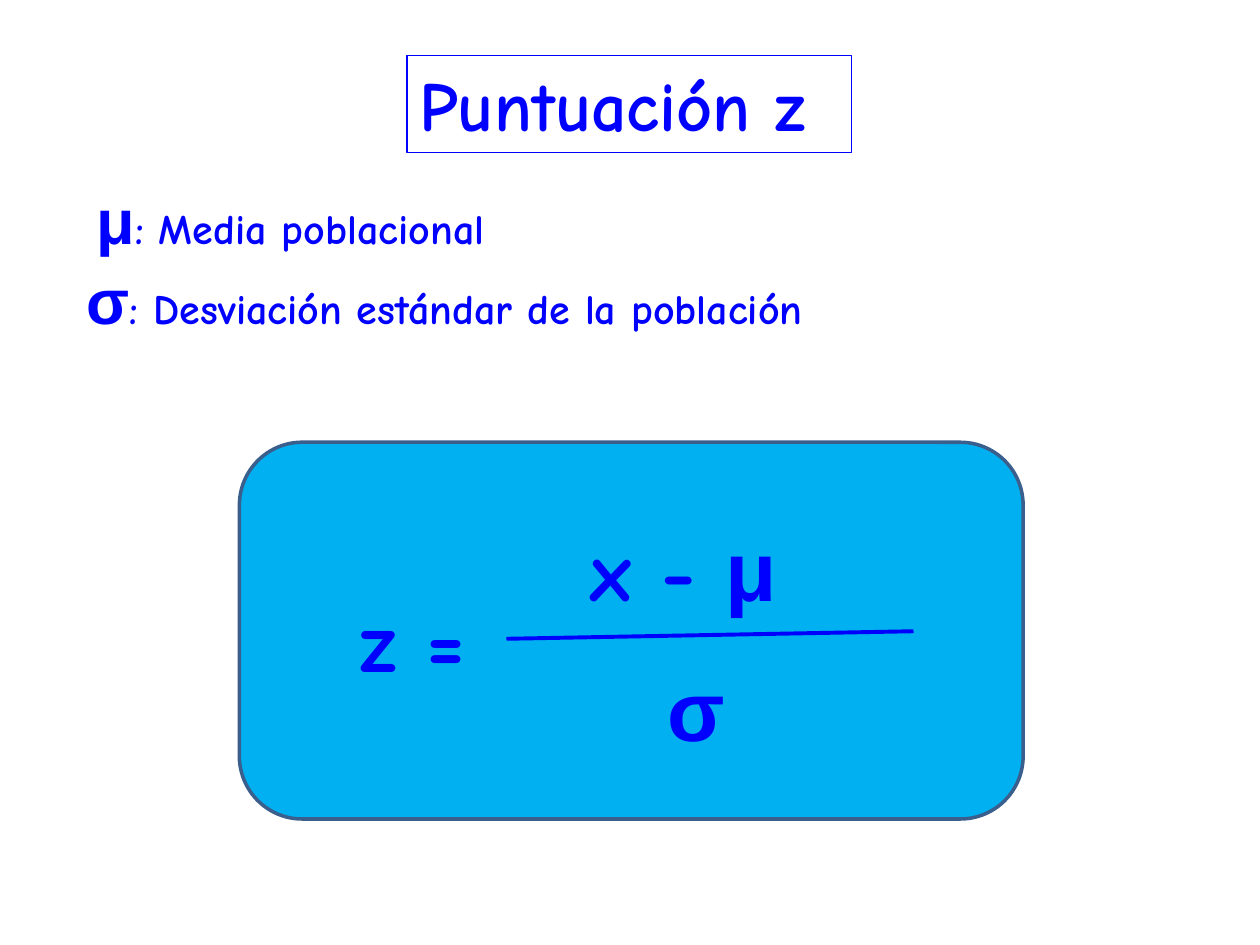
import dataclasses
import typing

import pptx
import pptx.dml.color
import pptx.enum.shapes
import pptx.enum.text
import pptx.oxml
import pptx.util

# Grid: square cells, 100 columns by 75 rows
COLUMNS, ROWS = 100, 75
CELL = pptx.util.Inches(0.1)


@dataclasses.dataclass(frozen=True)
class Theme:
    ink: str = "0000FF"
    card: str = "00B0F0"
    card_edge: str = "3A5F8C"
    text_font: str = "Comic Neue"
    symbol_font: str = "Arial"
    title: int = 40
    symbol: int = 36
    body: int = 24
    formula: int = 48


THEME = Theme()


class Area(typing.NamedTuple):
    column: float
    row: float
    columns: float
    rows: float


class Span(typing.NamedTuple):
    text: str
    size: int
    font: str = THEME.text_font


@dataclasses.dataclass(frozen=True)
class Label:
    area: Area
    spans: tuple[Span, ...]
    centred: bool = False
    insets: tuple[float, float] = (1, 1)  # left and right, in columns


def grid(cells: float) -> int:
    return round(cells * CELL)


def colour(value: str) -> pptx.dml.color.RGBColor:
    return pptx.dml.color.RGBColor.from_string(value)


def style_font(font, span: Span) -> None:
    font.name = span.font
    font.size = pptx.util.Pt(span.size)
    font.bold = True
    font.color.rgb = colour(THEME.ink)


def add_label(shapes, label: Label):
    box = shapes.add_textbox(*map(grid, label.area))
    frame = box.text_frame
    frame.word_wrap = True
    frame.auto_size = pptx.enum.text.MSO_AUTO_SIZE.SHAPE_TO_FIT_TEXT
    frame.margin_left, frame.margin_right = map(grid, label.insets)
    para = frame.paragraphs[0]
    if label.centred:
        para.alignment = pptx.enum.text.PP_ALIGN.CENTER
    style_font(para.font, label.spans[0])
    for span in label.spans:
        run = para.add_run()
        run.text = span.text
        style_font(run.font, span)
    return box


def add_card(shapes, area: Area) -> None:
    card = shapes.add_shape(
        pptx.enum.shapes.MSO_SHAPE.ROUNDED_RECTANGLE, *map(grid, area))
    card.shadow.inherit = False
    card.fill.solid()
    card.fill.fore_color.rgb = colour(THEME.card)
    card.line.color.rgb = colour(THEME.card_edge)
    card.line.width = pptx.util.Pt(2)


def add_fraction_bar(shapes, start: tuple[float, float],
                     end: tuple[float, float]) -> None:
    bar = shapes.add_connector(
        pptx.enum.shapes.MSO_CONNECTOR.STRAIGHT, *map(grid, start + end))
    bar.line.color.rgb = colour(THEME.ink)
    bar.line.width = pptx.util.Pt(2.25)
    properties = bar._element.spPr
    properties.append(pptx.oxml.parse_xml(
        '<a:effectLst xmlns:a='
        '"http://schemas.openxmlformats.org/drawingml/2006/main"/>'))


def symbol(text: str, size: int) -> Span:
    return Span(text, size, THEME.symbol_font)


def definition(area: Area, sign: str, meaning: str) -> Label:
    return Label(area, (symbol(sign, THEME.symbol),
                        Span(f": {meaning}", THEME.body)))


TITLE = Label(Area(32.3, 4.4, 35.3, 7.7), (Span("Puntuación z", THEME.title),))
DEFINITIONS = (
    definition(Area(6.7, 13.9, 36.4, 7.1), "μ", "Media poblacional"),
    definition(Area(5.9, 20.3, 65.9, 7.1), "σ",
               "Desviación estándar de la población"),
)
LEFT_SIDE = Label(Area(27.6, 46.2, 12.6, 9.1), (Span("z =", THEME.formula),))
NUMERATOR = Label(
    Area(45.7, 40.6, 19.7, 9.1),
    (Span("x - ", THEME.formula), symbol("μ", THEME.formula)),
    centred=True, insets=(0, 2.6))
DENOMINATOR = Label(Area(52, 51.7, 6.1, 9.1), (symbol("σ", THEME.formula),))


def main() -> None:
    deck = pptx.Presentation()
    deck.slide_width, deck.slide_height = grid(COLUMNS), grid(ROWS)
    page = deck.slides.add_slide(deck.slide_layouts[6])

    # Card behind the formula
    add_card(page.shapes, Area(19, 35.1, 62.2, 29.9))

    # Framed title
    title = add_label(page.shapes, TITLE)
    title.line.color.rgb = colour(THEME.ink)
    title.line.width = pptx.util.Pt(0.75)

    # Meaning of each symbol
    for label in DEFINITIONS:
        add_label(page.shapes, label)

    # Formula, kept together as one group
    formula = page.shapes.add_group_shape()
    add_label(formula.shapes, LEFT_SIDE)
    add_fraction_bar(formula.shapes, (40.2, 50.7), (72.5, 50.1))
    for label in (NUMERATOR, DENOMINATOR):
        add_label(formula.shapes, label)

    deck.save("out.pptx")


if __name__ == "__main__":
    main()
